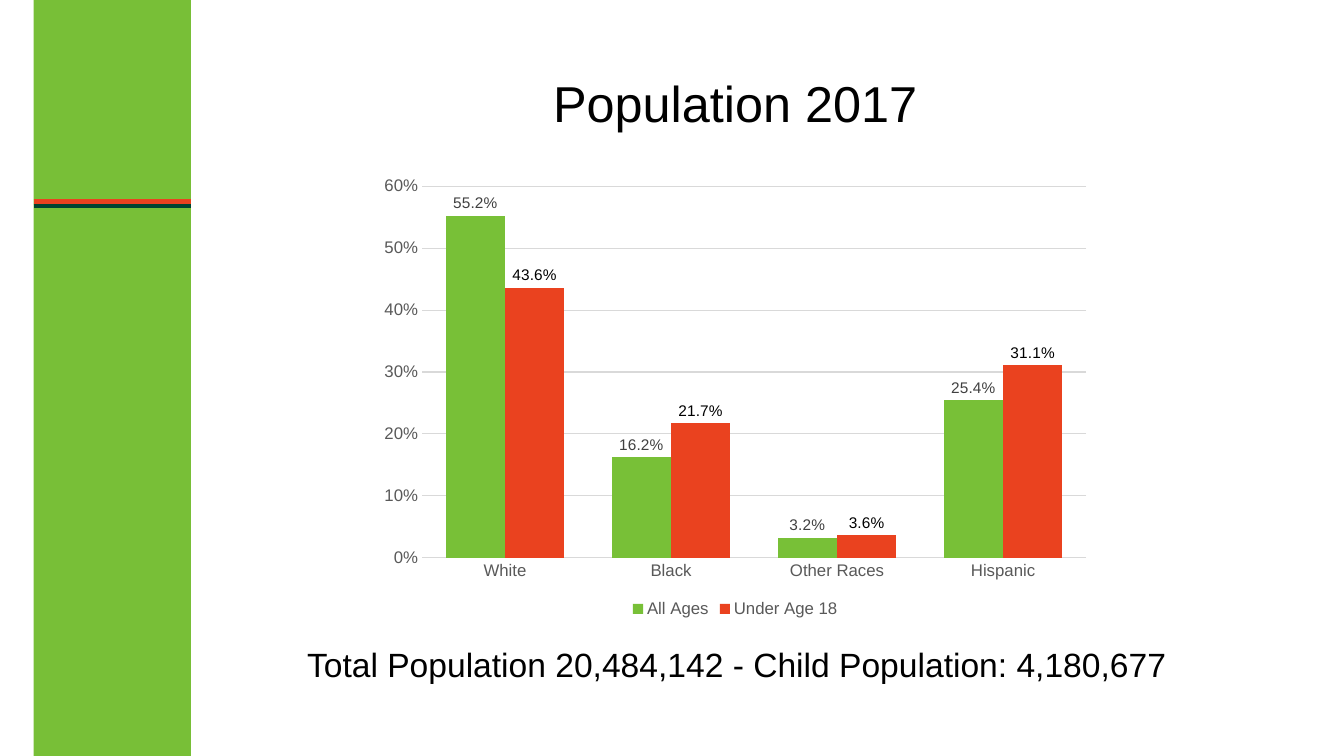
import pptx
import pptx.util
import pptx.chart.data
import pptx.dml.color
import pptx.enum.chart
import pptx.enum.shapes
import pptx.enum.text
import pptx.oxml

Cm, Pt = pptx.util.Cm, pptx.util.Pt
RGBColor = pptx.dml.color.RGBColor
FONT = "Arial"
BLACK = RGBColor(0x00, 0x00, 0x00)
BAND_GREEN = RGBColor(0x78, 0xBF, 0x37)
SERIES_GREEN = RGBColor(0x78, 0xC0, 0x37)
RED = RGBColor(0xEA, 0x42, 0x1F)
DARK_GREEN = RGBColor(0x00, 0x45, 0x31)
GREY = RGBColor(0x59, 0x59, 0x59)
DARK_GREY = RGBColor(0x40, 0x40, 0x40)
LIGHT_GREY = RGBColor(0xD9, 0xD9, 0xD9)


def set_font(font, size, color):
    font.name = FONT
    font.size = Pt(size)
    font.color.rgb = color


def add_text(text, left, top, width, height, size, align, wrap):
    tf = s.shapes.add_textbox(Cm(left), Cm(top), Cm(width), Cm(height)).text_frame
    tf.word_wrap = wrap
    p = tf.paragraphs[0]
    p.text = text
    p.alignment = align
    set_font(p.font, size, BLACK)
    return tf


prs = pptx.Presentation()
prs.slide_width, prs.slide_height = Cm(33.87), Cm(19.05)
s = prs.slides.add_slide(prs.slide_layouts[6])

# Side band with two stripes
band = s.shapes.add_shape(pptx.enum.shapes.MSO_SHAPE.RECTANGLE,
                          Cm(0.85), 0, Cm(3.96), prs.slide_height)
band.shadow.inherit = False
band.fill.solid()
band.fill.fore_color.rgb = BAND_GREEN
band.line.fill.background()
for y, color in ((5.08, RED), (5.19, DARK_GREEN)):
    stripe = s.shapes.add_connector(pptx.enum.shapes.MSO_CONNECTOR.STRAIGHT,
                                    Cm(0.85), Cm(y), Cm(4.81), Cm(y))
    stripe.line.color.rgb = color
    stripe.line.width = Pt(3)
    stripe._element.spPr.append(pptx.oxml.parse_xml(
        '<a:effectLst xmlns:a="http://schemas.openxmlformats.org/drawingml/2006/main"/>'))

# Title
add_text("Population 2017", 9.32, 1.7, 18.42, 3.18, 36,
         pptx.enum.text.PP_ALIGN.CENTER, True)

# Population chart
data = pptx.chart.data.CategoryChartData(number_format="0.0%")
data.categories = ["White", "Black", "Other Races", "Hispanic"]
data.add_series("All Ages", (0.552, 0.162, 0.032, 0.254))
data.add_series("Under Age 18", (0.436, 0.217, 0.036, 0.311))
chart = s.shapes.add_chart(pptx.enum.chart.XL_CHART_TYPE.COLUMN_CLUSTERED,
                           Cm(9.32), Cm(4.24), Cm(18.42), Cm(11.43), data).chart
set_font(chart.font, 10, BLACK)
chart.has_title = False
chart.has_legend = True
chart.legend.position = pptx.enum.chart.XL_LEGEND_POSITION.BOTTOM
chart.legend.include_in_layout = False
set_font(chart.legend.font, 12, GREY)

# Axes
for axis in (chart.category_axis, chart.value_axis):
    axis.major_tick_mark = axis.minor_tick_mark = pptx.enum.chart.XL_TICK_MARK.NONE
    set_font(axis.tick_labels.font, 12, GREY)
chart.value_axis.minimum_scale = 0
chart.value_axis.maximum_scale = 0.6
chart.value_axis.major_unit = 0.1
chart.value_axis.tick_labels.number_format = "0%"
chart.value_axis.tick_labels.number_format_is_linked = False
chart.value_axis.format.line.fill.background()
for rule in (chart.category_axis.format.line,
             chart.value_axis.major_gridlines.format.line):
    rule.color.rgb = LIGHT_GREY
    rule.width = Pt(0.75)

# Columns and value labels
plot = chart.plots[0]
plot.gap_width = 80
plot.overlap = 0
plot.vary_by_categories = False
for series, color, label_color in zip(plot.series, (SERIES_GREEN, RED), (DARK_GREY, BLACK)):
    series.format.fill.solid()
    series.format.fill.fore_color.rgb = color
    labels = series.data_labels
    labels.show_value = True
    labels.position = pptx.enum.chart.XL_LABEL_POSITION.OUTSIDE_END
    labels.number_format = "0.0%"
    labels.number_format_is_linked = False
    set_font(labels.font, 11, label_color)

# Totals
totals = add_text("Total Population 20,484,142 - Child Population: 4,180,677",
                  7.49, 16.1, 22.63, 1.27, 24, pptx.enum.text.PP_ALIGN.LEFT, False)
totals.auto_size = pptx.enum.text.MSO_AUTO_SIZE.SHAPE_TO_FIT_TEXT

prs.save("out.pptx")
